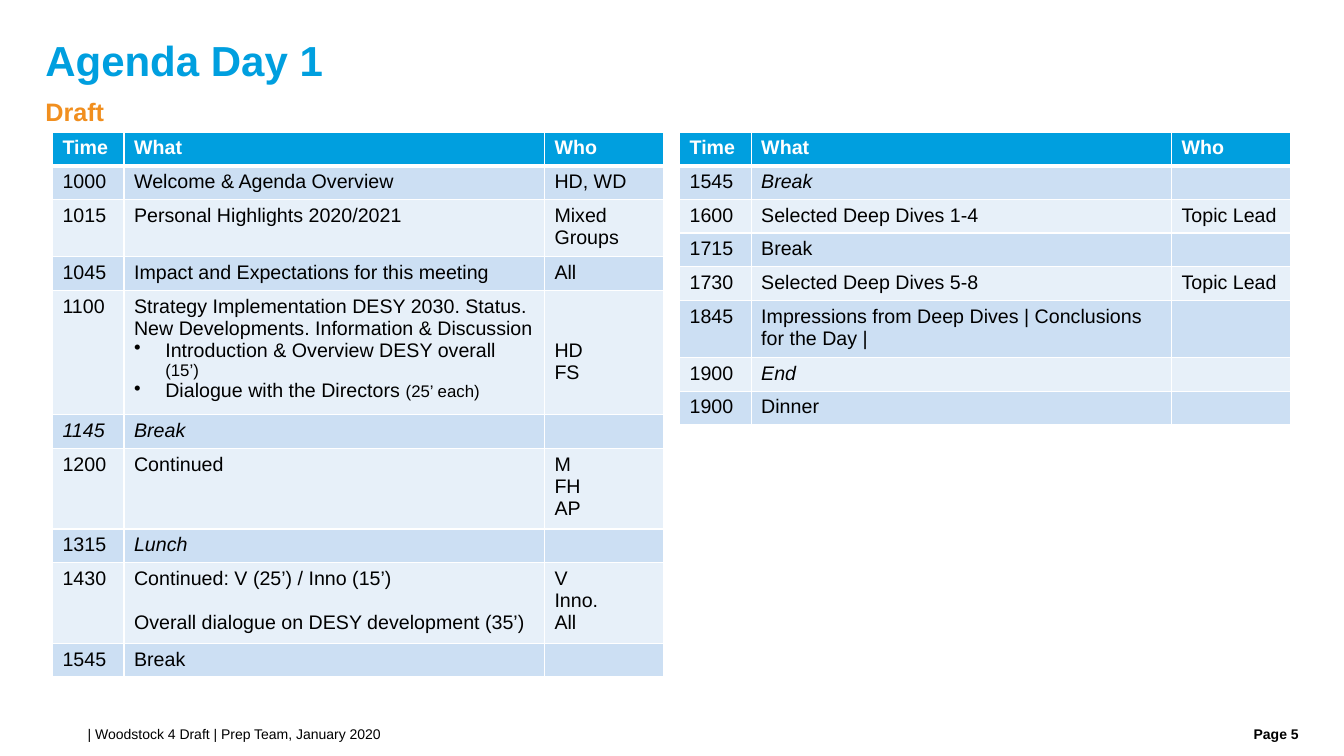
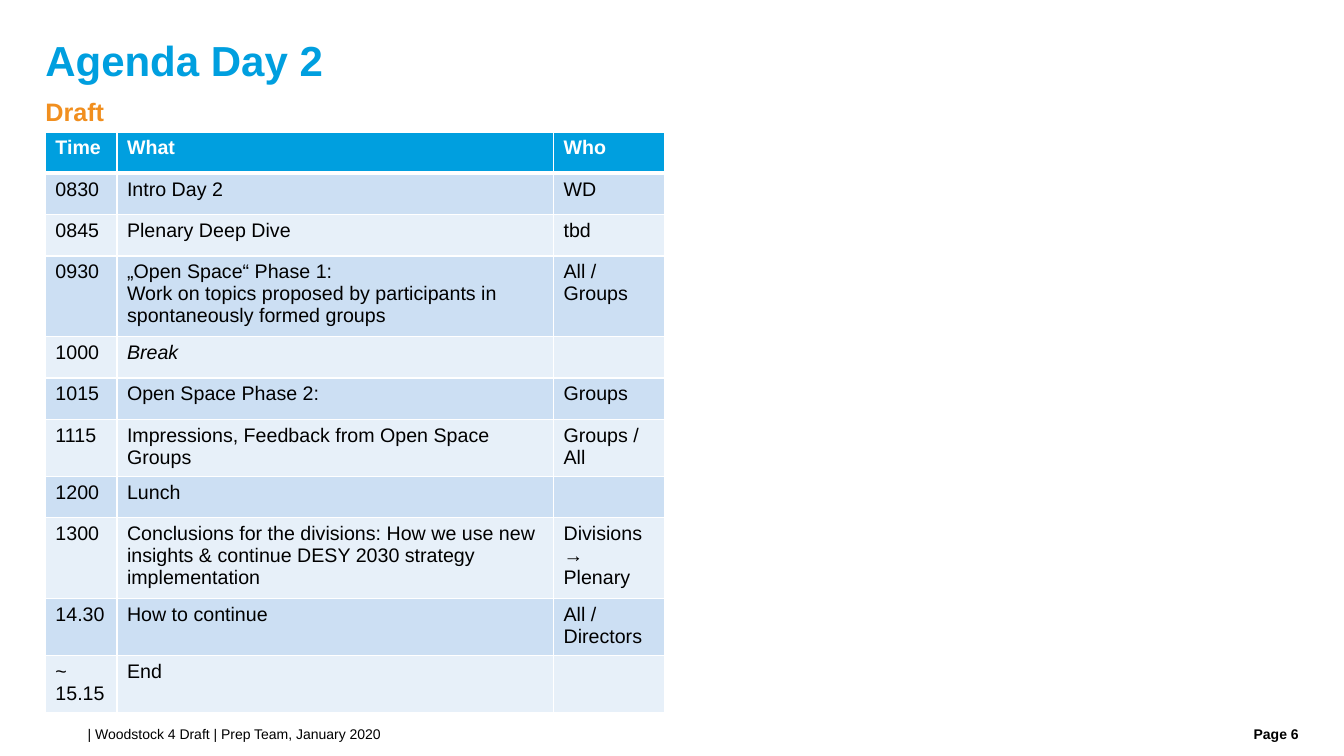
from dataclasses import dataclass

from lxml.etree import SubElement
from pptx import Presentation
from pptx.dml.color import RGBColor as Rgb
from pptx.enum.text import MSO_ANCHOR as Anchor, PP_ALIGN as Align
from pptx.oxml.ns import qn
from pptx.util import Emu, Pt

EMU_PER_PX = 9144  # 100 px to the inch


def px(length: int) -> Emu:
    return Emu(length * EMU_PER_PX)


@dataclass(frozen=True)
class Theme:
    font: str = "Arial"
    blue: str = "009FDF"
    orange: str = "F18F1F"
    black: str = "000000"
    white: str = "FFFFFF"
    bands: tuple[str, str] = ("CCDFF3", "E7F0F9")
    title_size: int = 30
    subtitle_size: int = 18
    table_size: int = 14
    small_size: int = 12
    footer_size: int = 10
    thin_border: int = 1
    thick_border: int = 3


THEME = Theme()


@dataclass(frozen=True)
class TextStyle:
    size: int
    color: str
    bold: bool = False
    italic: bool = False


@dataclass(frozen=True)
class Label:
    """A single-line text box that recurs on every slide."""
    left: int
    top: int
    width: int
    height: int
    style: TextStyle
    spacing: float = 1.0
    align: Align = Align.LEFT
    anchor: Anchor = Anchor.TOP


TITLE = Label(45, 38, 1244, 49, TextStyle(THEME.title_size, THEME.blue, bold=True),
              spacing=0.9, anchor=Anchor.MIDDLE)
SUBTITLE = Label(45, 89, 1244, 41, TextStyle(THEME.subtitle_size, THEME.orange, bold=True),
                 spacing=1.1, anchor=Anchor.MIDDLE)
FOOTER = Label(87, 720, 1088, 20, TextStyle(THEME.footer_size, THEME.black))
PAGE_NUMBER = Label(1186, 720, 102, 20, TextStyle(THEME.footer_size, THEME.black, bold=True),
                    align=Align.RIGHT)
FOOTER_TEXT = "| Woodstock 4 Draft | Prep Team, January 2020"


@dataclass(frozen=True)
class Line:
    """One paragraph in a cell; gap is the space above it in points."""
    text: str
    small: str = ""
    bullet: bool = False
    italic: bool = False
    gap: int = 0


Cell = str | Line | tuple[str | Line, ...]


@dataclass(frozen=True)
class Entry:
    time: Cell
    what: Cell
    who: Cell = ""
    height: int = 0  # 0 takes the row height of the table


@dataclass(frozen=True)
class Agenda:
    left: int
    columns: tuple[int, int, int]
    row_height: int
    entries: tuple[Entry, ...]


@dataclass(frozen=True)
class Page:
    title: str
    number: int
    agendas: tuple[Agenda, ...]


TABLE_TOP = 131
CELL_MARGIN_X, CELL_MARGIN_Y = 10, 5
BULLET_INDENT = 31
TWO_LINES, THREE_LINES = 54, 76
HEADER = Entry("Time", "What", "Who")
DAY_1_COLUMNS = (71, 417, 118)

# Agenda content
PAGES = (
    Page("Agenda Day 1", 5, (
        Agenda(52, DAY_1_COLUMNS, 32, (
            Entry("1000", "Welcome & Agenda Overview", "HD, WD"),
            Entry("1015", "Personal Highlights 2020/2021", "Mixed Groups", TWO_LINES),
            Entry("1045", "Impact and Expectations for this meeting", "All"),
            Entry("1100", (
                "Strategy Implementation DESY 2030. Status. New Developments. "
                "Information & Discussion",
                Line("Introduction & Overview DESY overall ", "(15’)", bullet=True),
                Line("Dialogue with the Directors ", "(25’ each)", bullet=True),
            ), (Line("HD", gap=32), "FS"), 116),
            Entry(Line("1145", italic=True), Line("Break", italic=True)),
            Entry("1200", "Continued", ("M", "FH", "AP"), THREE_LINES),
            Entry("1315", Line("Lunch", italic=True)),
            Entry("1430", (
                "Continued: V (25’) / Inno (15’)",
                Line("Overall dialogue on DESY development (35’)", gap=16),
            ), ("V", "Inno.", "All"), THREE_LINES),
            Entry("1545", "Break"),
        )),
        Agenda(674, DAY_1_COLUMNS, 32, (
            Entry("1545", Line("Break", italic=True)),
            Entry("1600", "Selected Deep Dives 1-4", "Topic Lead"),
            Entry("1715", "Break"),
            Entry("1730", "Selected Deep Dives 5-8", "Topic Lead"),
            Entry("1845", "Impressions from Deep Dives | Conclusions for the Day |",
                  height=TWO_LINES),
            Entry("1900", Line("End", italic=True)),
            Entry("1900", "Dinner"),
        )),
    )),
    Page("Agenda Day 2", 6, (
        Agenda(45, (71, 433, 110), 41, (
            Entry("0830", "Intro Day 2", "WD"),
            Entry("0845", "Plenary Deep Dive", "tbd"),
            Entry("0930", (
                "„Open Space“ Phase 1:",
                "Work on topics proposed by participants in spontaneously formed groups",
            ), "All / Groups", THREE_LINES),
            Entry("1000", Line("Break", italic=True)),
            Entry("1015", "Open Space Phase 2:", "Groups"),
            Entry("1115", "Impressions, Feedback from Open Space Groups", "Groups / All",
                  TWO_LINES),
            Entry("1200", "Lunch"),
            Entry("1300", "Conclusions for the divisions: How we use new insights & "
                  "continue DESY 2030 strategy implementation",
                  ("Divisions", "→ Plenary"), THREE_LINES),
            Entry("14.30", "How to continue", "All / Directors", TWO_LINES),
            Entry("~\n15.15", "End", height=TWO_LINES),
        )),
    )),
)


def style_run(run, style: TextStyle) -> None:
    font = run.font
    font.name = THEME.font
    font.size = Pt(style.size)
    font.bold = style.bold
    font.italic = style.italic
    font.color.rgb = Rgb.from_string(style.color)


def add_label(slide, label: Label, text: str) -> None:
    box = slide.shapes.add_textbox(px(label.left), px(label.top),
                                   px(label.width), px(label.height))
    frame = box.text_frame
    frame.word_wrap = True
    frame.vertical_anchor = label.anchor
    frame.margin_left = frame.margin_right = frame.margin_top = frame.margin_bottom = 0
    frame.text = text
    para = frame.paragraphs[0]
    para.alignment = label.align
    para.line_spacing = label.spacing
    style_run(para.runs[0], label.style)


def set_borders(cell, top: int, bottom: int) -> None:
    properties = cell._tc.get_or_add_tcPr()
    thin = THEME.thin_border
    for side, width in (("L", thin), ("R", thin), ("T", top), ("B", bottom)):
        border = SubElement(properties, qn(f"a:ln{side}"), w=str(Pt(width)))
        fill = SubElement(border, qn("a:solidFill"))
        SubElement(fill, qn("a:srgbClr"), val=THEME.white)


def add_bullet(para) -> None:
    properties = para._p.get_or_add_pPr()
    properties.set("marL", str(px(BULLET_INDENT)))
    properties.set("indent", str(-px(BULLET_INDENT)))
    SubElement(properties, qn("a:buChar"), char="•")


def fill_cell(cell, content: Cell, color: str, bold: bool) -> None:
    cell.margin_left = cell.margin_right = px(CELL_MARGIN_X)
    cell.margin_top = cell.margin_bottom = px(CELL_MARGIN_Y)
    parts = content if isinstance(content, tuple) else (content,)
    for index, part in enumerate(parts):
        line = part if isinstance(part, Line) else Line(part)
        frame = cell.text_frame
        para = frame.add_paragraph() if index else frame.paragraphs[0]
        if not line.text:  # an empty cell must not grow its row
            SubElement(para._p, qn("a:endParaRPr"), sz=str(THEME.table_size * 100))
            continue
        para.text = line.text
        if line.bullet:
            add_bullet(para)
        if line.gap and index:
            para.space_before = Pt(line.gap)
        elif line.gap:
            cell.margin_top = px(CELL_MARGIN_Y) + Pt(line.gap)
        for run in para.runs:
            style_run(run, TextStyle(THEME.table_size, color, bold, line.italic))
        if line.small:
            run = para.add_run()
            run.text = line.small
            style_run(run, TextStyle(THEME.small_size, color, bold, line.italic))


def add_agenda(slide, agenda: Agenda) -> None:
    entries = (HEADER, *agenda.entries)
    heights = [entry.height or agenda.row_height for entry in entries]
    table = slide.shapes.add_table(
        len(entries), len(agenda.columns), px(agenda.left), px(TABLE_TOP),
        px(sum(agenda.columns)), px(sum(heights))).table
    table.horz_banding = False
    for column, width in zip(table.columns, agenda.columns):
        column.width = px(width)
    for index, (entry, height) in enumerate(zip(entries, heights)):
        table.rows[index].height = px(height)
        is_header = index == 0
        fill = THEME.blue if is_header else THEME.bands[(index - 1) % 2]
        top = THEME.thick_border if index == 1 else THEME.thin_border
        bottom = THEME.thick_border if is_header else THEME.thin_border
        for column, content in enumerate((entry.time, entry.what, entry.who)):
            cell = table.cell(index, column)
            set_borders(cell, top, bottom)
            cell.fill.solid()
            cell.fill.fore_color.rgb = Rgb.from_string(fill)
            fill_cell(cell, content, THEME.white if is_header else THEME.black, is_header)


def add_page(deck, page: Page) -> None:
    slide = deck.slides.add_slide(deck.slide_layouts[6])
    # Title, subtitle and footer
    for label, text in ((TITLE, page.title), (SUBTITLE, "Draft"), (FOOTER, FOOTER_TEXT),
                        (PAGE_NUMBER, f"Page {page.number}")):
        add_label(slide, label, text)
    # Agenda tables
    for agenda in page.agendas:
        add_agenda(slide, agenda)


def main() -> None:
    deck = Presentation()
    deck.slide_width, deck.slide_height = px(1333), px(750)
    for page in PAGES:
        add_page(deck, page)
    deck.save("out.pptx")


if __name__ == "__main__":
    main()
